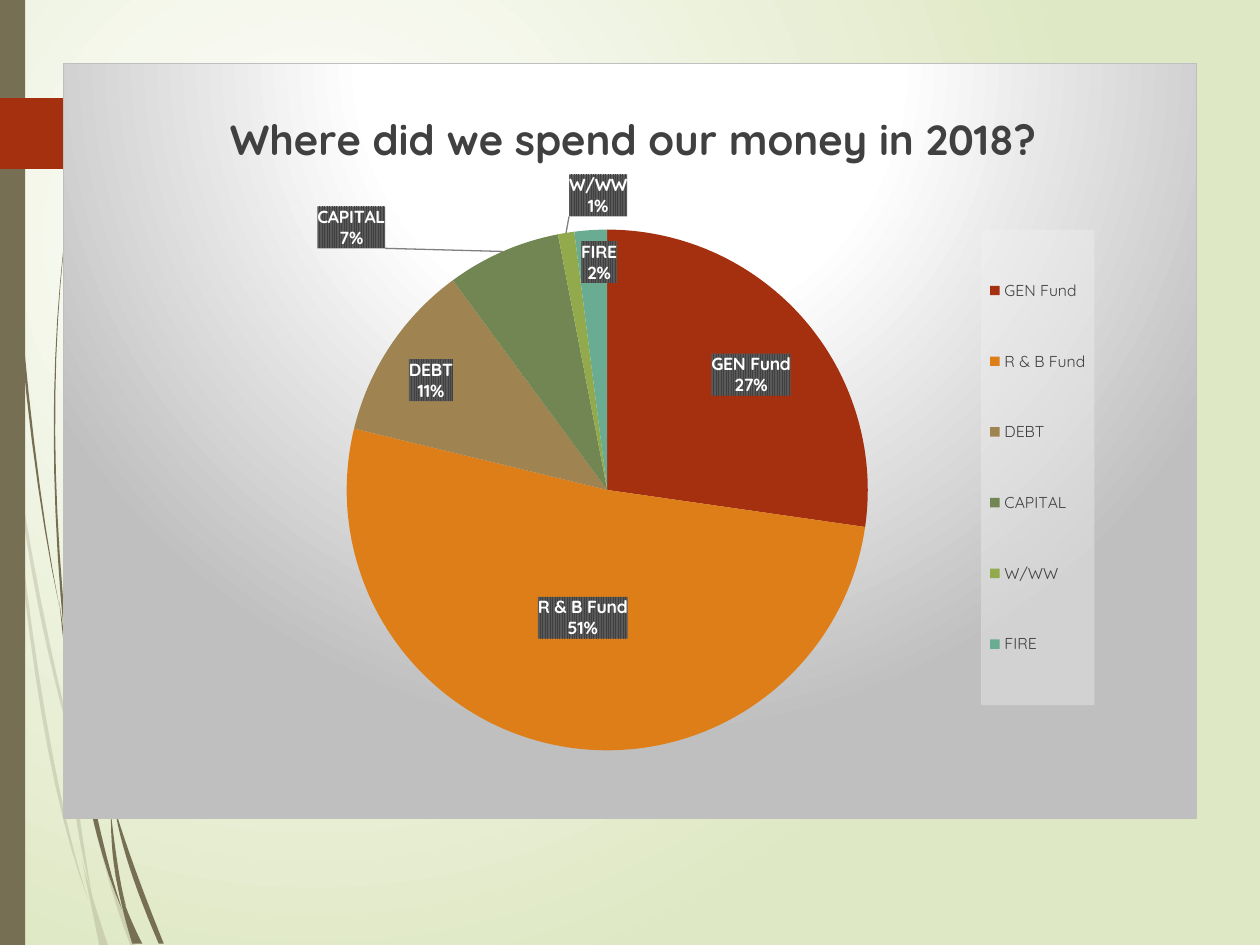
import pptx
import pptx.util
import pptx.dml.color
import pptx.chart.data
import pptx.enum.chart
import pptx.enum.shapes
import pptx.oxml
import pptx.oxml.ns

PX = 9144
FONT = "Quicksand"
COLORS = {"olive": "766F54", "red": "A53010", "text": "404040", "white": "FFFFFF",
          "pale": "DFE8C4", "gray": "BFBFBF", "stripe": "595959", "legend": "F2F2F2",
          "leader": "808080"}
RGB = {k: pptx.dml.color.RGBColor.from_string(v) for k, v in COLORS.items()}
NS = pptx.oxml.ns.nsdecls("a", "c")
qn = pptx.oxml.ns.qn


def gradient(stops, left, top, right, bottom):
    gs = "".join(f'<a:gs pos="{pos * 1000}"><a:srgbClr val="{COLORS[c]}"/></a:gs>' for pos, c in stops)
    return (f'<a:gradFill {NS} rotWithShape="1"><a:gsLst>{gs}</a:gsLst><a:path path="circle">'
            f'<a:fillToRect l="{left * 1000}" t="{top * 1000}" r="{right * 1000}" b="{bottom * 1000}"/>'
            '</a:path></a:gradFill>')


def arc(start, mid, end, steps=12):
    pts = []
    for n in range(steps + 1):
        t = n / steps
        weights = ((1 - t) * (1 - 2 * t), 4 * t * (1 - t), t * (2 * t - 1))
        pts.append(tuple(PX * sum(w * p[k] for w, p in zip(weights, (start, mid, end))) for k in (0, 1)))
    return pts


prs = pptx.Presentation()
prs.slide_width, prs.slide_height = 1000 * PX, 750 * PX
s = prs.slides.add_slide(prs.slide_layouts[6])
s.background.fill.solid()
bg = s.element.find(".//" + qn("p:bgPr"))
bg.replace(bg[0], pptx.oxml.parse_xml(gradient([(0, "white"), (100, "pale")], 50, 50, 100, 100)))

# fmt: off
faint_blades = [
    ((10, 345), (29, 474), 3, (58, 594), 1),
    ((61, 596), (84, 690), 3, (104, 751), 4),
    ((8, 350), (33, 567), 3, (70, 714), 0),
    ((58, 599), (60, 646), 3, (73, 711), 0),
    ((65, 683), (72, 717), 3, (79, 751), 7),
]
dark_blades = [
    ((2, 0), (17, 274), 2, (47, 481), 0),
    ((91, 641), (103, 689), 4, (126, 749), 4),
    ((47, 477), (68, 624), 4, (97, 722), 0),
    ((58, 141), (43, 314), 1, (51, 505), 2),
    ((88, 645), (91, 690), 3, (100, 719), 0),
    ((91, 691), (97, 720), 3, (105, 749), 8),
]
# fmt: on
for blades, opacity in ((faint_blades, 20), (dark_blades, 100)):
    for tip, mid, mid_w, foot, foot_w in blades:
        left = arc(tip, mid, foot)
        right = arc(tip, (mid[0] + mid_w, mid[1]), (foot[0] + foot_w, foot[1]))
        fb = s.shapes.build_freeform(*left[0], scale=1.0)
        fb.add_line_segments(left[1:] + right[:0:-1], close=True)
        sp = fb.convert_to_shape()
        sp.shadow.inherit = False
        sp.line.fill.background()
        sp.fill.solid()
        sp.fill.fore_color.rgb = RGB["olive"]
        if opacity < 100:
            clr = sp.element.spPr.find(".//" + qn("a:srgbClr"))
            clr.append(pptx.oxml.parse_xml(f'<a:alpha {NS} val="{opacity * 1000}"/>'))

shape_kinds = pptx.enum.shapes.MSO_SHAPE
for kind, box, color in ((shape_kinds.RECTANGLE, (0, 0, 20, 750), "olive"),
                         (shape_kinds.PENTAGON, (0, 78, 149, 56), "red")):
    sp = s.shapes.add_shape(kind, *(v * PX for v in box))
    sp.shadow.inherit = False
    sp.line.fill.background()
    sp.fill.solid()
    sp.fill.fore_color.rgb = RGB[color]

funds = [
    ("GEN Fund", 27, "A53010", (0.04, -0.04)),
    ("R & B Fund", 51, "DE7E18", None),
    ("DEBT", 11, "9F8351", (-0.06, -0.05)),
    ("CAPITAL", 7, "728653", (-0.18, -0.19)),
    ("W/WW", 1, "92AA4C", (0.01, -0.22)),
    ("FIRE", 2, "6AAC91", (0, -0.13)),
]
cd = pptx.chart.data.CategoryChartData()
cd.categories = [f[0] for f in funds]
cd.add_series("Series 1", [f[1] for f in funds])
chart = s.shapes.add_chart(pptx.enum.chart.XL_CHART_TYPE.PIE, 50 * PX, 50 * PX, 900 * PX, 600 * PX, cd).chart
chart.font.name = FONT
chart.font.size = pptx.util.Pt(10)

chart.has_title = True
r = chart.chart_title.text_frame.paragraphs[0].add_run()
r.text = "Where did we spend our money in 2018?"
r.font.name, r.font.size, r.font.bold = FONT, pptx.util.Pt(24), True
r.font.color.rgb = RGB["text"]

chart.has_legend = True
chart.legend.position = pptx.enum.chart.XL_LEGEND_POSITION.RIGHT
chart.legend.include_in_layout = False
chart.legend.font.name, chart.legend.font.size = FONT, pptx.util.Pt(9)
chart.legend.font.color.rgb = RGB["text"]

plot = chart.plots[0]
plot.vary_by_categories = True
ser = plot.series[0]
box_fill = (f'<c:spPr><a:pattFill prst="narVert"><a:fgClr><a:srgbClr val="{COLORS["text"]}"/></a:fgClr>'
            f'<a:bgClr><a:srgbClr val="{COLORS["stripe"]}"/></a:bgClr></a:pattFill><a:ln><a:noFill/></a:ln></c:spPr>')
label_font = (f'sz="1000" b="1"><a:solidFill><a:srgbClr val="{COLORS["white"]}"/></a:solidFill>'
              f'<a:latin typeface="{FONT}"/>')
label_style = (f'{box_fill}<c:txPr><a:bodyPr/><a:p><a:pPr><a:defRPr {label_font}</a:defRPr></a:pPr></a:p></c:txPr>'
               '<c:dLblPos val="ctr"/><c:showLegendKey val="0"/><c:showVal val="0"/><c:showCatName val="1"/>'
               '<c:showSerName val="0"/><c:showPercent val="1"/><c:showBubbleSize val="0"/>'
               '<c:separator>\n</c:separator>')
labels = ""
for i, (name, value, color, shift) in enumerate(funds):
    fill = ser.points[i].format.fill
    fill.solid()
    fill.fore_color.rgb = pptx.dml.color.RGBColor.from_string(color)
    if shift:
        place = (f'<c:layout><c:manualLayout><c:x val="{shift[0]}"/><c:y val="{shift[1]}"/>'
                 '</c:manualLayout></c:layout>')
    else:
        lines = "".join(f'<a:p><a:r><a:rPr {label_font}</a:rPr><a:t>{t}</a:t></a:r></a:p>'
                        for t in (name.replace("&", "&amp;"), f"{value}%"))
        place = f'<c:tx><c:rich><a:bodyPr/>{lines}</c:rich></c:tx>'
    labels += f'<c:dLbl><c:idx val="{i}"/>{place}{label_style}</c:dLbl>'
ser._element.find(qn("c:cat")).addprevious(pptx.oxml.parse_xml(
    f'<c:dLbls {NS}>{labels}{label_style}<c:showLeaderLines val="1"/><c:leaderLines><c:spPr><a:ln w="9525">'
    f'<a:solidFill><a:srgbClr val="{COLORS["leader"]}"/></a:solidFill></a:ln></c:spPr></c:leaderLines></c:dLbls>'))

root = chart._chartSpace
for tag, index, pos, size in (("title", 1, (0.14, 0.05), None),
                              ("plotArea", 0, (0.07, 0.22), (0.82, 0.69)),
                              ("legend", 1, (0.81, 0.22), (0.1, 0.63))):
    el = root.find(".//" + qn("c:" + tag))
    for old in el.findall(qn("c:layout")):
        el.remove(old)
    target = '<c:layoutTarget val="inner"/>' if tag == "plotArea" else ""
    extent = f'<c:w val="{size[0]}"/><c:h val="{size[1]}"/>' if size else ""
    el.insert(index, pptx.oxml.parse_xml(
        f'<c:layout {NS}><c:manualLayout>{target}<c:xMode val="edge"/><c:yMode val="edge"/>'
        f'<c:x val="{pos[0]}"/><c:y val="{pos[1]}"/>{extent}</c:manualLayout></c:layout>'))

legend_fill = f'<a:solidFill><a:srgbClr val="{COLORS["legend"]}"><a:alpha val="39000"/></a:srgbClr></a:solidFill>'
chart_fill = gradient([(0, "white"), (39, "white"), (100, "gray")], 50, -80, 50, 180)
border = f'<a:ln w="9525"><a:solidFill><a:srgbClr val="{COLORS["gray"]}"/></a:solidFill></a:ln>'
for el, look in ((root.find(".//" + qn("c:legend")), legend_fill), (root, chart_fill + border)):
    el.find(qn("c:txPr")).addprevious(pptx.oxml.parse_xml(f'<c:spPr {NS}>{look}</c:spPr>'))

prs.save("out.pptx")
